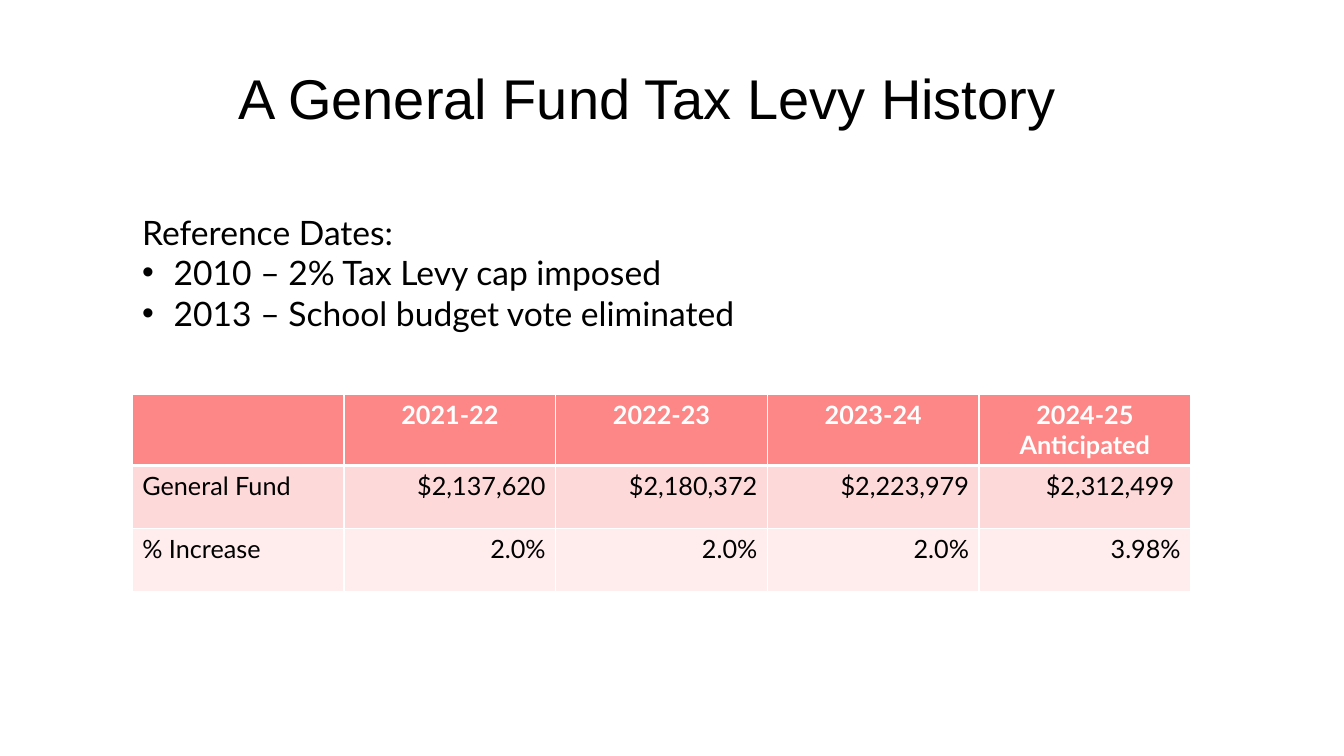
from lxml.etree import SubElement
from pptx import Presentation
from pptx.dml.color import RGBColor
from pptx.enum.text import MSO_ANCHOR as ANCHOR, PP_ALIGN as ALIGN
from pptx.oxml.ns import qn
from pptx.util import Emu, Pt

PX = 9525
BLACK = RGBColor(0x00, 0x00, 0x00)
WHITE = RGBColor(0xFF, 0xFF, 0xFF)
CORAL = RGBColor(0xFD, 0x86, 0x86)
PINK = RGBColor(0xFE, 0xD9, 0xD9)
PALE = RGBColor(0xFF, 0xED, 0xED)

TITLE = "A General Fund Tax Levy History"
DATES_HEADING = "Reference Dates:"
DATES = ["2010 – 2% Tax Levy cap imposed", "2013 – School budget vote eliminated"]
LEVY = [
    ["", "2021-22", "2022-23", "2023-24", "2024-25\nAnticipated"],
    ["General Fund", "$2,137,620", "$2,180,372", "$2,223,979", "$2,312,499 "],
    ["% Increase", "2.0%", "2.0%", "2.0%", "3.98%"],
]
ROW_FILLS = [CORAL, PINK, PALE]
ROW_HEIGHTS = [67, 60, 60]


def px(n):
    return Emu(n * PX)


def format_text(tf, font, size, color, align, bold=False):
    for p in tf.paragraphs:
        p.alignment = align
        for r in p.runs:
            r.font.name = font
            r.font.size = Pt(size)
            r.font.bold = bold
            r.font.color.rgb = color


def add_text(slide, x, y, w, h, lines):
    tf = slide.shapes.add_textbox(px(x), px(y), px(w), px(h)).text_frame
    tf.word_wrap = True
    tf.text = "\n".join(lines)
    return tf


def add_bullet(p, indent):
    pPr = p._p.get_or_add_pPr()
    pPr.set("marL", str(px(indent)))
    pPr.set("indent", str(-px(indent)))
    SubElement(pPr, qn("a:buFont"), typeface="Arial")
    SubElement(pPr, qn("a:buChar"), char="•")


def set_border(cell, side, width):
    tcPr = cell._tc.get_or_add_tcPr()
    ln = SubElement(tcPr, qn(f"a:ln{side}"), w=str(Pt(width)))
    fill = SubElement(ln, qn("a:solidFill"))
    SubElement(fill, qn("a:srgbClr"), val=str(WHITE))


def fill_cell(cell, text, row, col):
    header = row == 0
    cell.text = text
    cell.vertical_anchor = ANCHOR.TOP
    align = ALIGN.CENTER if header else ALIGN.RIGHT if col else ALIGN.LEFT
    format_text(cell.text_frame, "Lato", 18, WHITE if header else BLACK, align, header)
    for side in "LRTB":
        thick = (row, side) in [(0, "B"), (1, "T")]
        set_border(cell, side, 3 if thick else 1)
    cell.fill.solid()
    cell.fill.fore_color.rgb = ROW_FILLS[row]


def add_levy_table(slide, x, y, w):
    rows, cols = len(LEVY), len(LEVY[0])
    table = slide.shapes.add_table(
        rows, cols, px(x), px(y), px(w), px(sum(ROW_HEIGHTS))).table
    for column in table.columns:
        column.width = Emu(px(w) // cols)
    for i, values in enumerate(LEVY):
        table.rows[i].height = px(ROW_HEIGHTS[i])
        for j, text in enumerate(values):
            fill_cell(table.cell(i, j), text, i, j)


def add_title(slide):
    tf = add_text(slide, 112, 59, 1008, 59, [TITLE])
    tf.margin_top, tf.margin_bottom = px(9), 0
    tf.paragraphs[0].line_spacing = 0.9
    format_text(tf, "Arial", 40, BLACK, ALIGN.CENTER)


def add_dates(slide):
    tf = add_text(slide, 126, 197, 983, 194, [DATES_HEADING, *DATES])
    format_text(tf, "Lato", 24, BLACK, ALIGN.LEFT)
    for p in tf.paragraphs[1:]:
        add_bullet(p, 30)


def main():
    prs = Presentation()
    prs.slide_width, prs.slide_height = px(1280), px(720)
    slide = prs.slides.add_slide(prs.slide_layouts[6])
    add_title(slide)
    add_levy_table(slide, 126, 376, 1008)
    add_dates(slide)
    prs.save("out.pptx")


if __name__ == "__main__":
    main()
